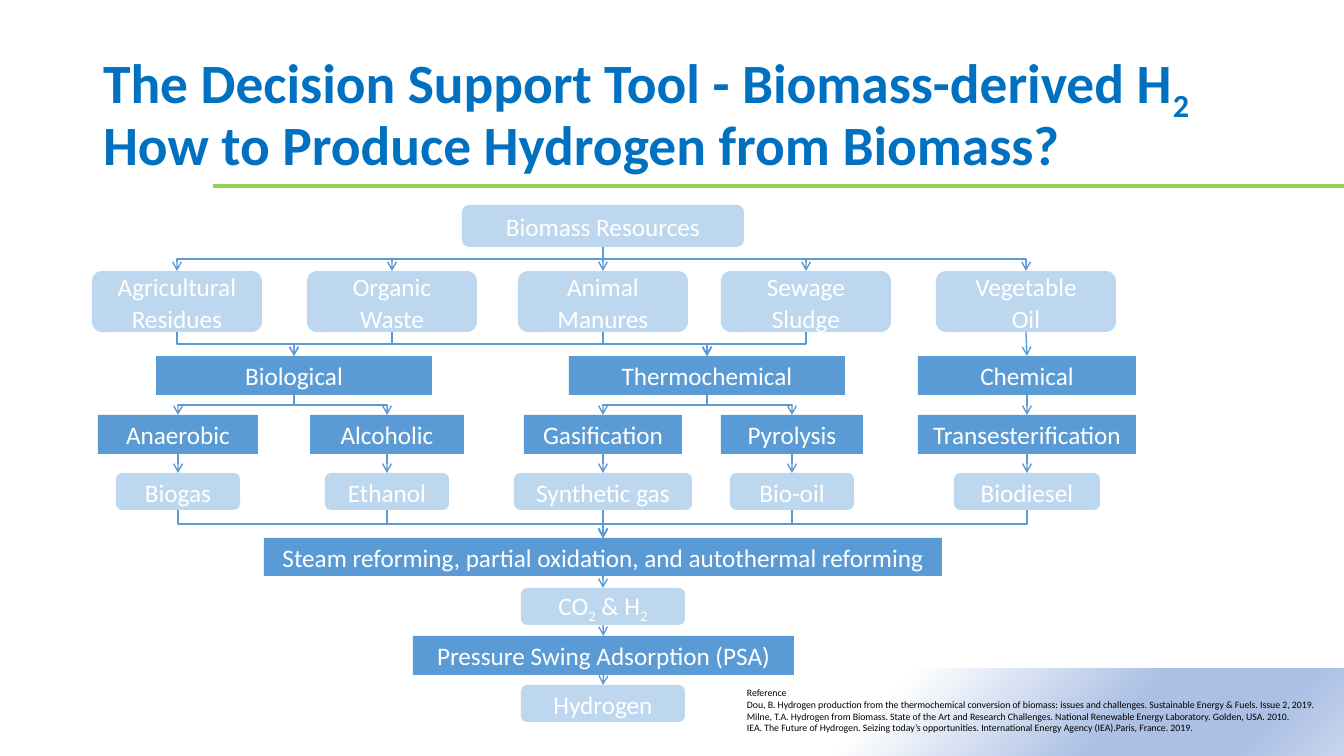
from dataclasses import dataclass
from lxml.etree import SubElement
from pptx import Presentation
from pptx.dml.color import RGBColor
from pptx.enum.shapes import MSO_CONNECTOR, MSO_SHAPE
from pptx.enum.text import MSO_ANCHOR, MSO_AUTO_SIZE, PP_ALIGN
from pptx.oxml import parse_xml
from pptx.oxml.ns import nsdecls, qn
from pptx.util import Emu, Pt


@dataclass(frozen=True)
class Theme:
    font: str = "Calibri"
    title: str = "0070C0"
    rule: str = "92D050"
    process: str = "5B9BD5"
    material: str = "BDD7EE"
    light: str = "FFFFFF"
    dark: str = "000000"
    footer: tuple = ((64, "FFFFFF"), (82, "ABC0E4"), (92, "ABC0E4"), (100, "C7D5ED"))
    title_size: float = 39.6
    box_size: int = 18
    reference_size: int = 7


THEME = Theme()
TITLE_LINES = ("The Decision Support Tool - Biomass-derived H|2", "How to Produce Hydrogen from Biomass?")
REFERENCES = (
    "Reference",
    "Dou, B. Hydrogen production from the thermochemical conversion of biomass: issues and challenges. "
    "Sustainable Energy & Fuels. Issue 2, 2019.",
    "Milne, T.A. Hydrogen from Biomass. State of the Art and Research Challenges. "
    "National Renewable Energy Laboratory. Golden, USA. 2010.",
    "IEA. The Future of Hydrogen. Seizing today’s opportunities. "
    "International Energy Agency (IEA).Paris, France. 2019.",
)
FEEDSTOCKS = (
    ("Agricultural Residues", 177, 170),
    ("Organic Waste", 392, 170),
    ("Animal Manures", 603, 170),
    ("Sewage Sludge", 806, 170),
    ("Vegetable\nOil", 1026, 180),
)
ROUTES = (("Biological", 294, 276), ("Thermochemical", 707, 276), ("Chemical", 1027, 218))
CONVERSIONS = (
    ("Anaerobic", 178, 160),
    ("Alcoholic", 387, 154),
    ("Gasification", 603, 158),
    ("Pyrolysis", 792, 142),
    ("Transesterification", 1027, 218),
)
PRODUCTS = (
    ("Biogas", 178, 124),
    ("Ethanol", 387, 124),
    ("Synthetic gas", 603, 178),
    ("Bio-oil", 792, 124),
    ("Biodiesel", 1027, 146),
)
FEED_TO_ROUTE = ((0, 0), (1, 0), (1, 1), (2, 1), (3, 1), (4, 2))
ROUTE_TO_CONVERSION = ((0, 0), (0, 1), (1, 2), (1, 3), (2, 4))


def px(length):
    return Emu(round(length * 12192000 / 1344))


def color(value):
    return RGBColor.from_string(value)


def style_font(para, size, value, bold=False):
    para.font.name = THEME.font
    para.font.size = Pt(size)
    para.font.bold = bold
    para.font.color.rgb = color(value)


def write_spans(para, text):
    for index, part in enumerate(text.split("|")):
        span = para.add_run()
        span.text = part
        if index % 2:
            span.font._element.set("baseline", "-25000")


def add_title(page):
    title = page.shapes.title
    title.left, title.top, title.width, title.height = px(93), px(40), px(1159), px(146)
    frame = title.text_frame
    frame.auto_size = MSO_AUTO_SIZE.NONE
    frame.vertical_anchor = MSO_ANCHOR.MIDDLE
    para = frame.paragraphs[0]
    para.alignment = PP_ALIGN.LEFT
    para.line_spacing = 0.9
    style_font(para, THEME.title_size, THEME.title, True)
    first, second = TITLE_LINES
    write_spans(para, first)
    para.add_line_break()
    write_spans(para, second)


def add_footer_band(page):
    band = page.shapes.add_shape(MSO_SHAPE.RECTANGLE, px(-7), px(668), px(1351), px(88))
    band.shadow.inherit = False
    band.line.fill.background()
    stops = "".join(
        f'<a:gs pos="{position * 1000}"><a:srgbClr val="{value}"/></a:gs>' for position, value in THEME.footer
    )
    gradient = parse_xml(
        f'<a:gradFill {nsdecls("a")} rotWithShape="1"><a:gsLst>{stops}</a:gsLst>'
        '<a:lin ang="2700000" scaled="0"/></a:gradFill>'
    )
    band._element.spPr.find(qn("a:prstGeom")).addnext(gradient)


def add_line(page, kind, start, end, value, width, arrow=False):
    line = page.shapes.add_connector(kind, *map(px, (*start, *end)))
    line.line.color.rgb = color(value)
    line.line.width = Pt(width)
    if arrow:
        SubElement(line.line._get_or_add_ln(), qn("a:tailEnd"), type="arrow")
    SubElement(line._element.spPr, qn("a:effectLst"))
    return line


def add_box(page, text, center, top, width, height, material=False):
    kind = MSO_SHAPE.ROUNDED_RECTANGLE if material else MSO_SHAPE.RECTANGLE
    box = page.shapes.add_shape(kind, px(center - width // 2), px(top), px(width), px(height))
    box.shadow.inherit = False
    box.fill.solid()
    box.fill.fore_color.rgb = color(THEME.material if material else THEME.process)
    box.line.fill.background()
    frame = box.text_frame
    frame.word_wrap = True
    frame.vertical_anchor = MSO_ANCHOR.MIDDLE
    for index, words in enumerate(text.split("\n")):
        para = frame.add_paragraph() if index else frame.paragraphs[0]
        para.alignment = PP_ALIGN.CENTER
        style_font(para, THEME.box_size, THEME.light)
        write_spans(para, words)
        if material:
            para.line_spacing = 1.05
    if material:
        para.space_after = Pt(8)
    return box, center, top, top + height


def add_row(page, entries, top, height, material=False):
    return [add_box(page, text, center, top, width, height, material) for text, center, width in entries]


def link(page, source, target):
    source_box, start_x, _, start_y = source
    target_box, end_x, end_y, _ = target
    run, drop = end_x - start_x, end_y - start_y
    if abs(run) <= 1:
        arrow = add_line(page, MSO_CONNECTOR.STRAIGHT, (start_x, start_y), (end_x, end_y), THEME.process, 1, True)
        arrow.begin_connect(source_box, 2)
        arrow.end_connect(target_box, 0)
        return
    middle_x, middle_y = (start_x + end_x) / 2, (start_y + end_y) / 2
    half_drop = drop / 2 if run > 0 else -drop / 2
    half_run = abs(run) / 2
    start = (middle_x + half_drop, middle_y - half_run)
    end = (middle_x - half_drop, middle_y + half_run)
    arrow = add_line(page, MSO_CONNECTOR.ELBOW, start, end, THEME.process, 1, True)
    arrow._element.spPr.find(qn("a:xfrm")).set("rot", str((270 if run > 0 else 90) * 60000))


def add_references(page):
    box = page.shapes.add_textbox(px(737), px(682), px(632), px(57))
    frame = box.text_frame
    frame.word_wrap = True
    for index, reference in enumerate(REFERENCES):
        para = frame.add_paragraph() if index else frame.paragraphs[0]
        para.text = reference
        style_font(para, THEME.reference_size, THEME.dark)


def add_flowchart(page):
    resources = add_box(page, "Biomass Resources", 603, 205, 282, 42, True)
    feedstocks = add_row(page, FEEDSTOCKS, 271, 61, True)
    routes = add_row(page, ROUTES, 356, 39)
    conversions = add_row(page, CONVERSIONS, 415, 39)
    products = add_row(page, PRODUCTS, 473, 37, True)
    reforming = add_box(
        page, "Steam reforming, partial oxidation, and autothermal reforming", 603, 538, 678, 38
    )
    gases = add_box(page, "CO|2| & H|2", 603, 588, 164, 37, True)
    adsorption = add_box(page, "Pressure Swing Adsorption (PSA)", 603, 636, 381, 39)
    hydrogen = add_box(page, "Hydrogen", 603, 685, 164, 37, True)
    links = [(resources, feedstock) for feedstock in feedstocks]
    links += [(feedstocks[feed], routes[route]) for feed, route in FEED_TO_ROUTE]
    links += [(routes[route], conversions[conversion]) for route, conversion in ROUTE_TO_CONVERSION]
    links += zip(conversions, products)
    links += [(product, reforming) for product in products]
    links += [(reforming, gases), (gases, adsorption), (adsorption, hydrogen)]
    for source, target in links:
        link(page, source, target)


def main():
    deck = Presentation()
    deck.slide_width, deck.slide_height = px(1344), px(756)
    page = deck.slides.add_slide(deck.slide_layouts[5])
    add_footer_band(page)
    add_line(page, MSO_CONNECTOR.STRAIGHT, (213, 186), (1344, 186), THEME.rule, 2.25)
    add_title(page)
    add_flowchart(page)
    add_references(page)
    deck.save("out.pptx")


if __name__ == "__main__":
    main()
